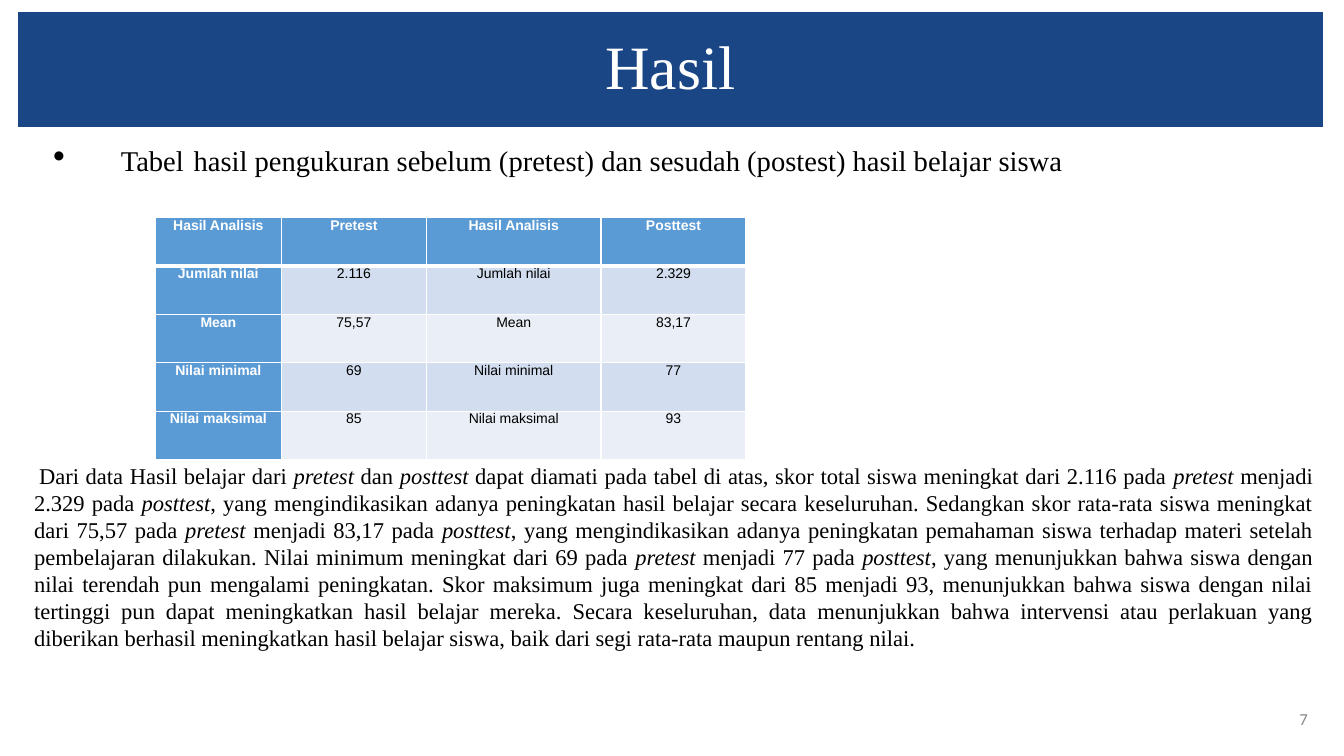
import pptx
import pptx.dml.color
import pptx.enum.shapes
import pptx.enum.text
import pptx.oxml.ns
import pptx.util
from lxml import etree

Inches, Pt = pptx.util.Inches, pptx.util.Pt
RGBColor = pptx.dml.color.RGBColor
ALIGN, ANCHOR = pptx.enum.text.PP_ALIGN, pptx.enum.text.MSO_ANCHOR
qn = pptx.oxml.ns.qn

WHITE = RGBColor(0xFF, 0xFF, 0xFF)
BLACK = RGBColor(0, 0, 0)
NAVY = RGBColor(0x1B, 0x46, 0x85)
BLUE = RGBColor(0x5B, 0x9B, 0xD5)
GRAY = RGBColor(0x88, 0x88, 0x88)
BANDS = (RGBColor(0xD2, 0xDE, 0xEF), RGBColor(0xEA, 0xEF, 0xF7))
SERIF = "Times New Roman"

HEADING = "hasil pengukuran sebelum (pretest) dan sesudah (postest) hasil belajar siswa"
SCORES = (
    ("Hasil Analisis", "Pretest", "Hasil Analisis", "Posttest"),
    ("Jumlah nilai", "2.116", "Jumlah nilai", "2.329"),
    ("Mean", "75,57", "Mean", "83,17"),
    ("Nilai minimal", "69", "Nilai minimal", "77"),
    ("Nilai maksimal", "85", "Nilai maksimal", "93"),
)
COLUMN_WIDTHS = (1.25, 1.44, 1.73, 1.44)
# One sentence per item; asterisks enclose italic words.
DISCUSSION = (
    "Dari data Hasil belajar dari *pretest* dan *posttest* dapat diamati pada tabel di atas, "
    "skor total siswa meningkat dari 2.116 pada *pretest* menjadi 2.329 pada *posttest*, yang "
    "mengindikasikan adanya peningkatan hasil belajar secara keseluruhan.",
    "Sedangkan skor rata-rata siswa meningkat dari 75,57 pada *pretest* menjadi 83,17 pada "
    "*posttest*, yang mengindikasikan adanya peningkatan pemahaman siswa terhadap materi "
    "setelah pembelajaran dilakukan.",
    "Nilai minimum meningkat dari 69 pada *pretest* menjadi 77 pada *posttest*, yang "
    "menunjukkan bahwa siswa dengan nilai terendah pun mengalami peningkatan.",
    "Skor maksimum juga meningkat dari 85 menjadi 93, menunjukkan bahwa siswa dengan nilai "
    "tertinggi pun dapat meningkatkan hasil belajar mereka.",
    "Secara keseluruhan, data menunjukkan bahwa intervensi atau perlakuan yang diberikan "
    "berhasil meningkatkan hasil belajar siswa, baik dari segi rata-rata maupun rentang nilai.",
)


def add_run(paragraph, text, color, **formats):
    run = paragraph.add_run()
    run.text = text
    run.font.color.rgb = color
    for name, value in formats.items():
        setattr(run.font, name, value)


def add_text_box(slide, box, alignment):
    """Add a wrapping text box and return its first paragraph."""
    frame = slide.shapes.add_textbox(*map(Inches, box)).text_frame
    frame.word_wrap = True
    frame.paragraphs[0].alignment = alignment
    return frame.paragraphs[0]


def set_indent(paragraph, margin, first_line):
    properties = paragraph._p.get_or_add_pPr()
    properties.set("marL", str(Inches(margin)))
    properties.set("indent", str(Inches(first_line)))
    return properties


def add_title(slide, box):
    banner = slide.shapes.add_shape(
        pptx.enum.shapes.MSO_SHAPE.RECTANGLE, *map(Inches, box))
    banner.shadow.inherit = False
    banner.fill.solid()
    banner.fill.fore_color.rgb = NAVY
    banner.line.fill.background()
    banner.text_frame.vertical_anchor = ANCHOR.MIDDLE
    paragraph = banner.text_frame.paragraphs[0]
    paragraph.alignment = ALIGN.CENTER
    paragraph.line_spacing = 0.9
    add_run(paragraph, "Hasil", WHITE, name=SERIF, size=Pt(44))


def add_heading(slide, box):
    paragraph = add_text_box(slide, box, ALIGN.LEFT)
    properties = set_indent(paragraph, 0.92, -0.67)
    etree.SubElement(properties, qn("a:buSzPct"), val="117000")
    etree.SubElement(properties, qn("a:buFont"), typeface="Arial")
    etree.SubElement(properties, qn("a:buChar"), char="•")
    for text, size in (("Tabel", 20.4), (" ", 28.1), (HEADING, 20.4)):
        add_run(paragraph, text, BLACK, name=SERIF, size=Pt(size))


def set_borders(cell, bottom_width):
    properties = cell._tc.get_or_add_tcPr()
    widths = {"a:lnL": 1, "a:lnR": 1, "a:lnT": 1, "a:lnB": bottom_width}
    for position, (tag, width) in enumerate(widths.items()):
        line = etree.Element(qn(tag), w=str(Pt(width)))
        fill = etree.SubElement(line, qn("a:solidFill"))
        etree.SubElement(fill, qn("a:srgbClr"), val=str(WHITE))
        properties.insert(position, line)


def add_score_table(slide, box):
    table = slide.shapes.add_table(
        len(SCORES), len(COLUMN_WIDTHS), *map(Inches, box)).table
    for column, width in zip(table.columns, COLUMN_WIDTHS):
        column.width = Inches(width)
    for row_index, values in enumerate(SCORES):
        for column_index, value in enumerate(values):
            cell = table.cell(row_index, column_index)
            is_header = row_index == 0 or column_index == 0
            cell.fill.solid()
            cell.fill.fore_color.rgb = BLUE if is_header else BANDS[(row_index - 1) % 2]
            cell.margin_left = cell.margin_right = Inches(0.07)
            cell.margin_top = cell.margin_bottom = 0
            set_borders(cell, 3 if row_index == 0 else 1)
            paragraph = cell.text_frame.paragraphs[0]
            paragraph.alignment = ALIGN.CENTER
            add_run(paragraph, value, WHITE if is_header else BLACK,
                    name="Arial", size=Pt(10), bold=is_header)


def add_discussion(slide, box):
    paragraph = add_text_box(slide, box, ALIGN.JUSTIFY)
    set_indent(paragraph, 0.06, 0.05)
    for index, text in enumerate(" ".join(DISCUSSION).split("*")):
        add_run(paragraph, text, BLACK, name=SERIF, size=Pt(16.1), italic=index % 2 == 1)


def add_page_number(slide, box):
    paragraph = add_text_box(slide, box, ALIGN.RIGHT)
    add_run(paragraph, "7", GRAY, name="Calibri", size=Pt(12))


def main():
    presentation = pptx.Presentation()
    presentation.slide_width = Inches(13.33)
    presentation.slide_height = Inches(7.5)
    slide = presentation.slides.add_slide(presentation.slide_layouts[6])
    add_title(slide, (0.18, 0.12, 12.94, 1.14))
    add_heading(slide, (0.18, 1.26, 12.94, 0.6))
    add_score_table(slide, (1.54, 2.16, 5.86, 2.4))
    add_discussion(slide, (0.18, 4.53, 12.94, 2.2))
    add_page_number(slide, (12.5, 6.98, 0.57, 0.3))
    presentation.save("out.pptx")


if __name__ == "__main__":
    main()
